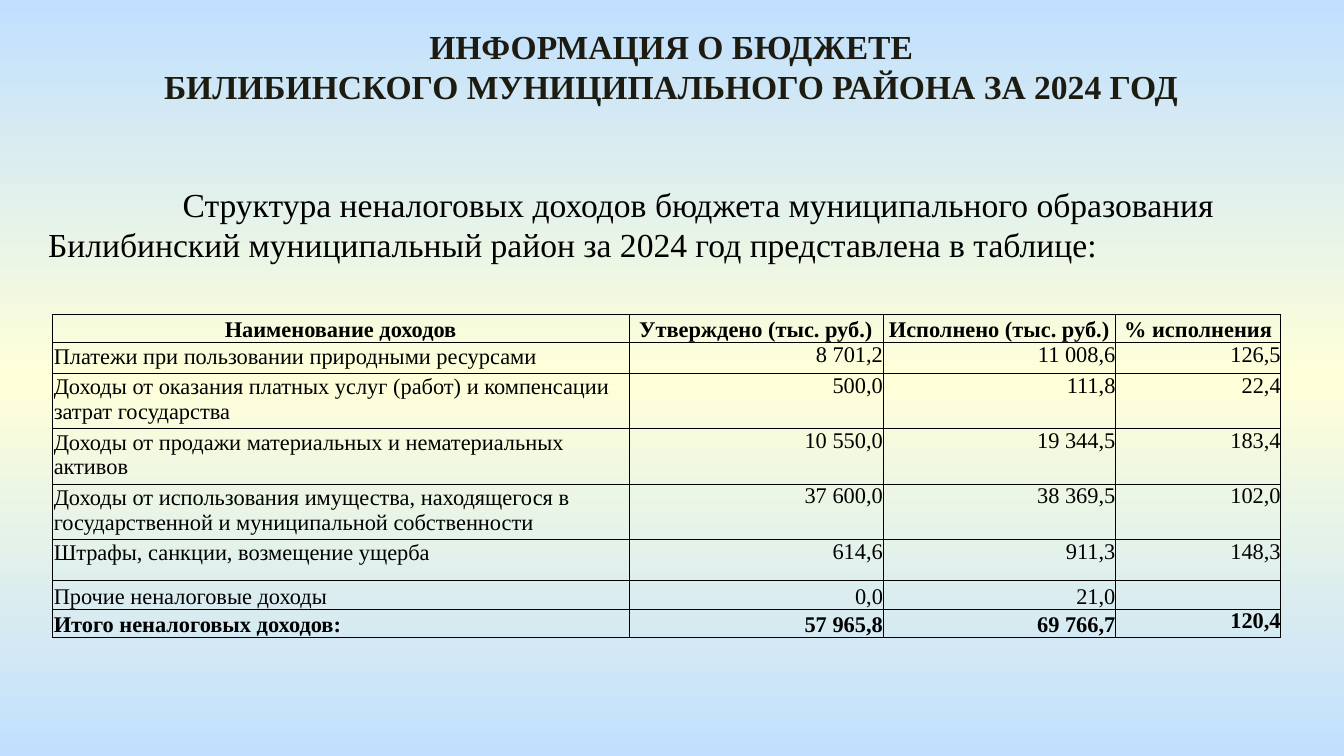
import copy

import pptx
import pptx.dml.color
import pptx.enum.text
import pptx.oxml
import pptx.oxml.ns
import pptx.util

WIDTH = 10
HEIGHT = WIDTH * 9 / 16
SERIF = "Times New Roman"
BLACK = "000000"
SKY, CREAM = "C1E0FF", "FFFFD9"
ALIGN = pptx.enum.text.PP_ALIGN
ANCHOR = pptx.enum.text.MSO_ANCHOR

COLUMNS = [4.29, 1.89, 1.73, 1.23]
TABLE_HEIGHT = 2.38
HEADER = ["Наименование доходов", "Утверждено (тыс. руб.)",
          "Исполнено (тыс. руб.)", "% исполнения"]
# Least row height, then the cells
INCOME = [
    (0.23, "Платежи при пользовании природными ресурсами",
     "8 701,2", "11 008,6", "126,5"),
    (0.41, "Доходы от оказания платных услуг (работ) и компенсации затрат государства",
     "500,0", "111,8", "22,4"),
    (0.22, "Доходы от продажи материальных и нематериальных активов",
     "10 550,0", "19 344,5", "183,4"),
    (0.23, "Доходы от использования имущества, находящегося в "
     "государственной и муниципальной собственности",
     "37 600,0", "38 369,5", "102,0"),
    (0.31, "Штрафы, санкции, возмещение ущерба", "614,6", "911,3", "148,3"),
    (0.17, "Прочие неналоговые доходы", "0,0", "21,0", ""),
    (0.17, "Итого неналоговых доходов:", "57 965,8", "69 766,7", "120,4"),
]


def color(value):
    return pptx.dml.color.RGBColor.from_string(value)


def inches(*lengths):
    return [pptx.util.Inches(length) for length in lengths]


def element(tag, attributes, content=""):
    namespace = pptx.oxml.ns.nsdecls("a")
    return pptx.oxml.parse_xml(f"<a:{tag} {namespace} {attributes}>{content}</a:{tag}>")


def add_span(para, text, size, font=SERIF, ink=BLACK, bold=False):
    span = para.add_run()
    span.text = text
    span.font.size = pptx.util.Pt(size)
    span.font.name = font
    span.font.bold = bold
    span.font.color.rgb = color(ink)


def paint_background(page):
    fill = page.background.fill
    fill.gradient()
    fill.gradient_angle = 270
    stops = page.element.find(".//" + pptx.oxml.ns.qn("a:gsLst"))
    stops.append(copy.deepcopy(stops[0]))
    for stop, place, tint in zip(fill.gradient_stops, (0, 0.5, 1), (SKY, CREAM, SKY)):
        stop.position = place
        stop.color.rgb = color(tint)


def add_text_box(page, left, top, width, height):
    """Add a wrapping text box that grows with its text; return its frame."""
    box = page.shapes.add_textbox(*inches(left, top, width, height))
    box.text_frame.word_wrap = True
    box.text_frame.auto_size = pptx.enum.text.MSO_AUTO_SIZE.SHAPE_TO_FIT_TEXT
    return box.text_frame


def add_title(page, lines):
    frame = add_text_box(page, 0.39, 0.14, 9.21, 0.71)
    for index, line in enumerate(lines):
        para = frame.add_paragraph() if index else frame.paragraphs[0]
        para.alignment = ALIGN.CENTER
        add_span(para, line, 18, ink="1E1C11", bold=True)


def add_intro(page, text):
    para = add_text_box(page, 0.26, 1.32, 9.49, 0.71).paragraphs[0]
    # The first line starts at a tab stop one inch in
    stop = f'<a:tab pos="{pptx.util.Inches(1)}" algn="l"/>'
    para._p.get_or_add_pPr().append(element("tabLst", "", stop))
    add_span(para, "\t", 18, font="Calibri")
    add_span(para, text, 18)


def outline_cell(cell):
    properties = cell._tc.get_or_add_tcPr()
    line = f'<a:solidFill><a:srgbClr val="{BLACK}"/></a:solidFill>'
    for side in ("lnL", "lnR", "lnT", "lnB"):
        properties.append(element(side, f'w="{pptx.util.Pt(0.5)}"', line))


def fill_cell(cell, text, align, anchor, inset, bold):
    outline_cell(cell)
    cell.fill.background()
    cell.margin_left = cell.margin_right = cell.margin_top = pptx.util.Inches(inset)
    cell.margin_bottom = 0
    cell.vertical_anchor = anchor
    para = cell.text_frame.paragraphs[0]
    para.alignment = align
    if text:
        add_span(para, text, 12, bold=bold)
    else:
        # An empty cell needs a small end mark to keep its row low
        para._p.append(element("endParaRPr", 'sz="1200"'))


def add_income_table(page):
    rows = [(0.19, *HEADER), *INCOME]
    total = len(rows) - 1
    frame = page.shapes.add_table(
        len(rows), len(COLUMNS), *inches(0.39, 2.34, sum(COLUMNS), TABLE_HEIGHT))
    table = frame.table
    table.first_row = table.horz_banding = False
    for column, width in zip(table.columns, COLUMNS):
        column.width = pptx.util.Inches(width)

    for r, (height, *texts) in enumerate(rows):
        table.rows[r].height = pptx.util.Inches(height)
        for c, text in enumerate(texts):
            header, name = r == 0, c == 0
            align = ALIGN.CENTER if header else ALIGN.LEFT if name else ALIGN.RIGHT
            # The header and the two closing rows stand on the bottom line
            low = header or (r >= total - 1 and c < len(COLUMNS) - 1)
            fill_cell(table.cell(r, c), text, align,
                      ANCHOR.BOTTOM if low else ANCHOR.TOP,
                      0.01 if header or name else 0, r in (0, total))
    # Row heights reset the frame, so its full height comes last
    frame.height = pptx.util.Inches(TABLE_HEIGHT)


def main():
    deck = pptx.Presentation()
    deck.slide_width, deck.slide_height = inches(WIDTH, HEIGHT)
    page = deck.slides.add_slide(deck.slide_layouts[6])
    paint_background(page)
    add_title(page, ["ИНФОРМАЦИЯ О БЮДЖЕТЕ",
                     "БИЛИБИНСКОГО МУНИЦИПАЛЬНОГО РАЙОНА ЗА 2024 ГОД"])
    add_intro(page, "Структура неналоговых доходов бюджета муниципального образования "
                    "Билибинский муниципальный район за 2024 год представлена в таблице:")
    add_income_table(page)
    deck.save("out.pptx")


if __name__ == "__main__":
    main()
